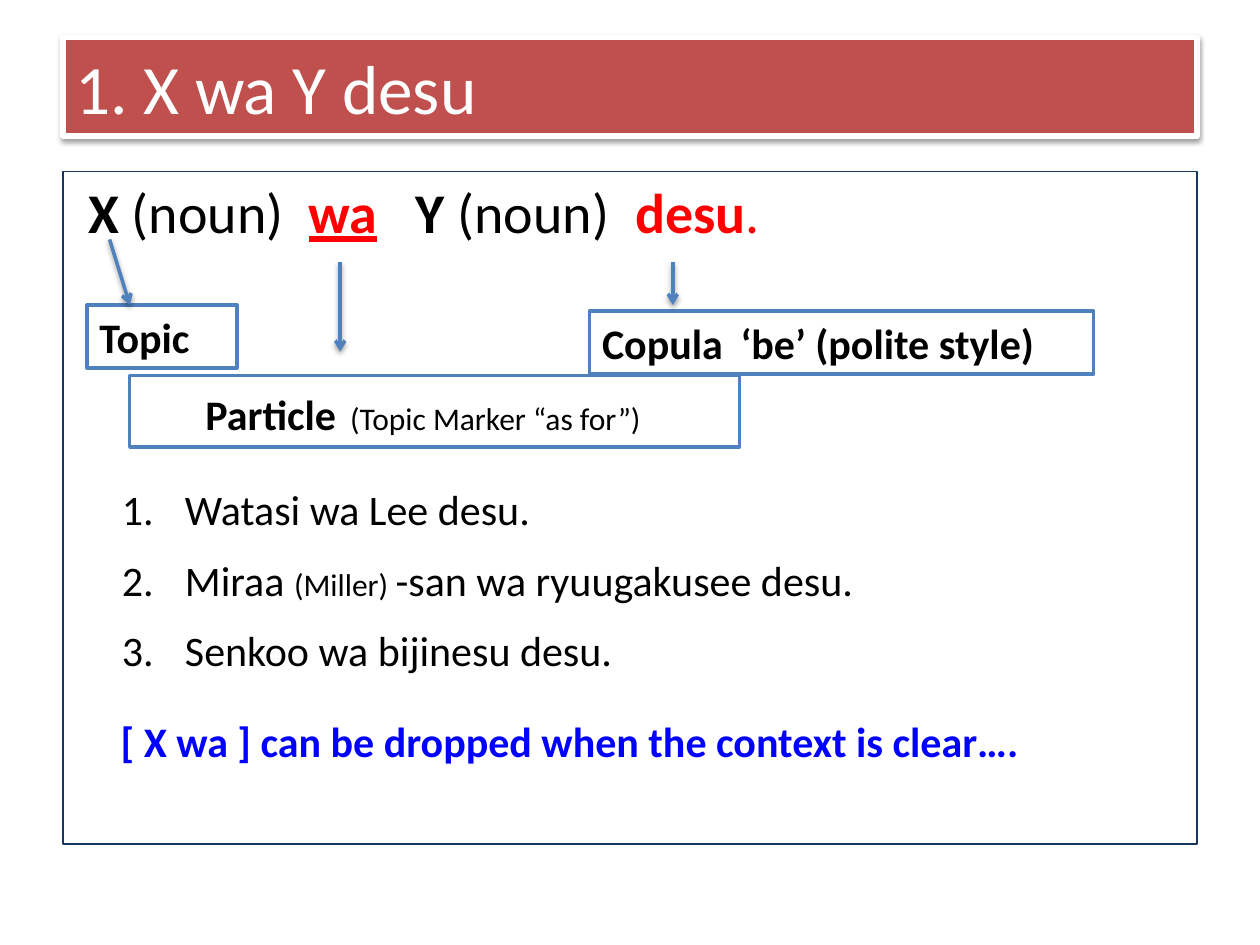
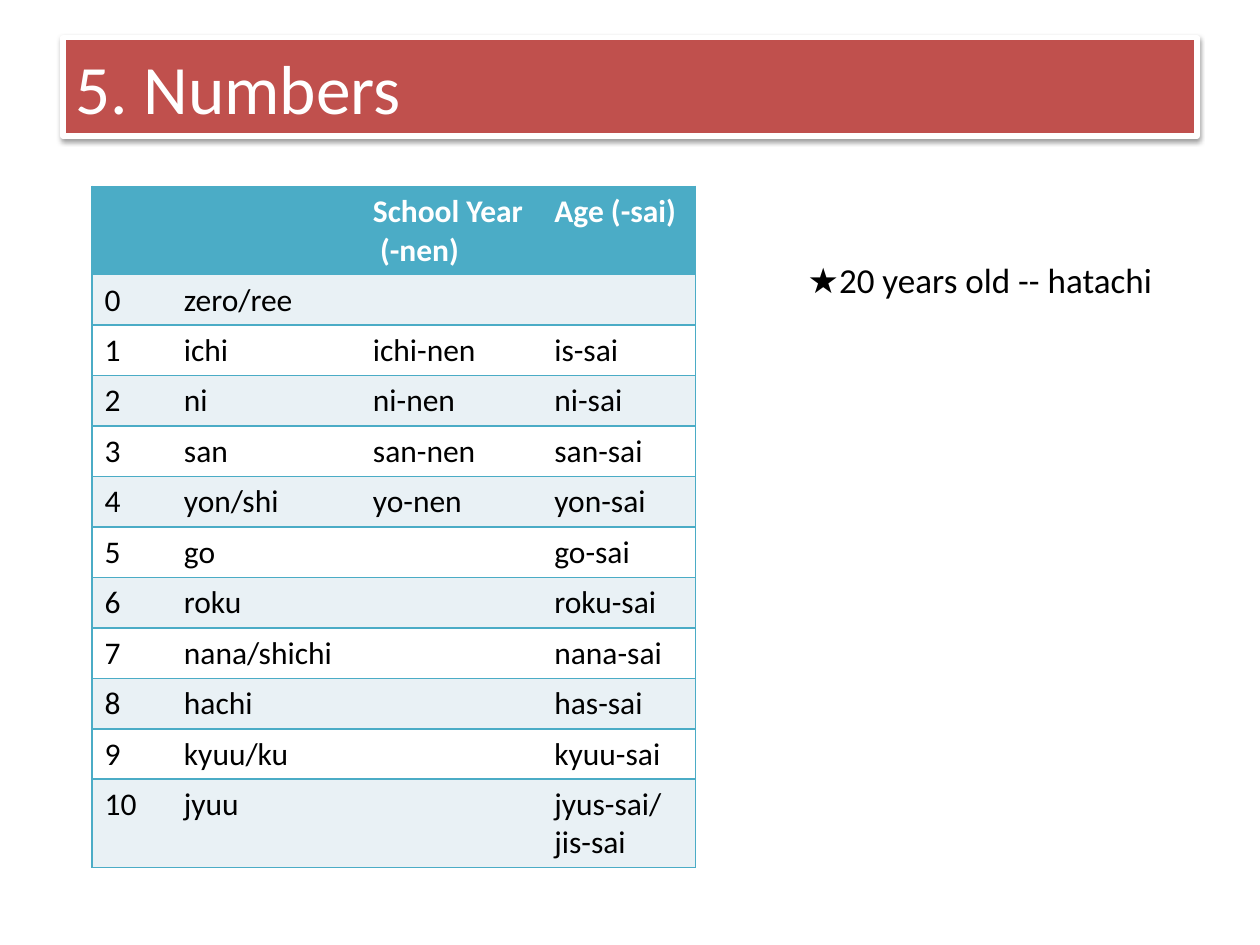
from dataclasses import dataclass
from typing import NamedTuple, Optional

from lxml.etree import SubElement
from pptx import Presentation
from pptx.dml.color import RGBColor
from pptx.enum.shapes import MSO_CONNECTOR, MSO_SHAPE
from pptx.enum.text import MSO_ANCHOR, PP_ALIGN
from pptx.oxml.ns import qn
from pptx.util import Inches, Pt

FONT = "Calibri"
WHITE = RGBColor(0xFF, 0xFF, 0xFF)
BLACK = RGBColor(0x00, 0x00, 0x00)
RED = RGBColor(0xFF, 0x00, 0x00)
BLUE = RGBColor(0x00, 0x00, 0xFF)
BRICK = RGBColor(0xC0, 0x50, 0x4D)
NAVY = RGBColor(0x17, 0x37, 0x5E)
STEEL = RGBColor(0x4F, 0x81, 0xBD)
TEAL = RGBColor(0x4B, 0xAC, 0xC6)
PALE = RGBColor(0xE9, 0xF1, 0xF5)


class Span(NamedTuple):
    text: str
    bold: Optional[bool] = None
    color: Optional[RGBColor] = None
    size: Optional[float] = None
    underline: Optional[bool] = None


class Arrow(NamedTuple):
    x1: float
    y1: float
    x2: float
    y2: float


@dataclass
class Box:
    """A rectangle with text; lengths are inches, sizes and line widths points."""
    left: float
    top: float
    width: float
    height: float
    paragraphs: list[list[Span]]
    size: float = 24
    color: RGBColor = BLACK
    bold: bool = False
    fill: Optional[RGBColor] = None
    line: Optional[RGBColor] = None
    line_width: float = 2
    inset_left: float = 0.1
    inset_top: float = 0.05
    anchor: MSO_ANCHOR = MSO_ANCHOR.TOP
    line_spacing: float = 1.0
    space_after: float = 0
    tabs: tuple[float, ...] = ()
    numbered: bool = False
    shadow: bool = False


TOPIC_PATTERN = [
    Span("X", bold=True), Span(" (noun)\t"),
    Span("wa", bold=True, color=RED, underline=True),
    Span("\t"), Span("Y", bold=True), Span(" (noun)\t"),
    Span("desu", bold=True, color=RED), Span(".", color=RED),
]
EXAMPLES = [
    [Span("Watasi wa Lee desu.")],
    [Span("Miraa "), Span("(Miller) ", size=18), Span("-san wa ryuugakusee desu.")],
    [Span("Senkoo wa bijinesu desu.")],
]
PATTERN_BOXES = [
    Box(0.5, 1.36, 9, 5.34, [TOPIC_PATTERN], size=32, line=NAVY, line_width=0.75,
        inset_left=0.2, tabs=(1.75, 2.6, 4.34)),
    Box(1.03, 2.98, 4.84, 0.57,
        [[Span("Particle\t", bold=True), Span("(Topic Marker “as for”)", size=18)]],
        fill=WHITE, line=STEEL, inset_left=0.6, inset_top=0.1, tabs=(1.15,)),
    Box(4.68, 2.47, 4, 0.5, [[Span("Copula\t‘be’ (polite style)")]], bold=True,
        fill=WHITE, line=STEEL, tabs=(1.1,)),
    Box(0.69, 2.42, 1.19, 0.5, [[Span("Topic")]], bold=True, fill=WHITE, line=STEEL),
    Box(0.87, 3.9, 7.46, 1.53, EXAMPLES, line_spacing=0.7, space_after=20,
        numbered=True),
    Box(0.86, 5.63, 8.21, 0.5,
        [[Span("[ X wa ] can be dropped when the context is clear….")]],
        color=BLUE, bold=True),
]
PATTERN_ARROWS = [
    Arrow(2.7, 2.08, 2.7, 2.79),
    Arrow(5.34, 2.08, 5.34, 2.42),
    Arrow(0.87, 1.9, 1.03, 2.42),
]
AGE_NOTE = Box(5.81, 1.97, 3.69, 0.47, [[Span("★20 years old -- hatachi")]], size=20,
               inset_left=0.6, line_spacing=1.1)

NUMBER_COLUMNS = (0.63, 1.5, 1.44, 1.22)
NUMBER_ROWS = [
    ("", "", "School Year\n (-nen)", "Age (-sai)"),
    ("0", "zero/ree", "", ""),
    ("1", "ichi", "ichi-nen", "is-sai"),
    ("2", "ni", "ni-nen", "ni-sai"),
    ("3", "san", "san-nen", "san-sai"),
    ("4", "yon/shi", "yo-nen", "yon-sai"),
    ("5", "go", "", "go-sai"),
    ("6", "roku", "", "roku-sai"),
    ("7", "nana/shichi", "", "nana-sai"),
    ("8", "hachi", "", "has-sai"),
    ("9", "kyuu/ku", "", "kyuu-sai"),
    ("10", "jyuu", "", "jyus-sai/\njis-sai"),
]
ROW_HEIGHT = 0.4
EXTRA_LINE = 0.3


def set_effects(shape, shadow: bool) -> None:
    """Give the shape its own effect list, empty unless a shadow is wanted."""
    effects = SubElement(shape.element.spPr, qn("a:effectLst"))
    if shadow:
        outer = SubElement(effects, qn("a:outerShdw"), blurRad=str(Pt(3.1)),
                           dist=str(Pt(1.6)), dir="5400000", rotWithShape="0")
        color = SubElement(outer, qn("a:srgbClr"), val=str(BLACK))
        SubElement(color, qn("a:alpha"), val="38000")


def set_font(font, size: float, color: RGBColor, bold: bool) -> None:
    font.name = FONT
    font.size = Pt(size)
    font.bold = bold
    font.color.rgb = color


def add_span(para, span: Span) -> None:
    run = para.add_run()
    run.text = span.text
    if span.bold is not None:
        run.font.bold = span.bold
    if span.underline is not None:
        run.font.underline = span.underline
    if span.size is not None:
        run.font.size = Pt(span.size)
    if span.color is not None:
        run.font.color.rgb = span.color


def add_paragraph(para, spans: list[Span], box: Box) -> None:
    para.alignment = PP_ALIGN.LEFT
    para.line_spacing = box.line_spacing
    para.space_after = Pt(box.space_after)
    properties = para._p.get_or_add_pPr()
    if box.numbered:
        properties.set("marL", str(Inches(0.5)))
        properties.set("indent", str(Inches(-0.5)))
        SubElement(properties, qn("a:buAutoNum"), type="arabicPeriod")
    if box.tabs:
        stops = SubElement(properties, qn("a:tabLst"))
        for stop in box.tabs:
            SubElement(stops, qn("a:tab"), pos=str(Inches(stop)), algn="l")
    set_font(para.font, box.size, box.color, box.bold)
    for span in spans:
        add_span(para, span)


def add_box(page, box: Box) -> None:
    place = [Inches(n) for n in (box.left, box.top, box.width, box.height)]
    if box.line is None:
        shape = page.shapes.add_textbox(*place)
    else:
        shape = page.shapes.add_shape(MSO_SHAPE.RECTANGLE, *place)
        if box.fill is None:
            shape.fill.background()
        else:
            shape.fill.solid()
            shape.fill.fore_color.rgb = box.fill
        shape.line.color.rgb = box.line
        shape.line.width = Pt(box.line_width)
        set_effects(shape, box.shadow)
    frame = shape.text_frame
    frame.word_wrap = True
    frame.vertical_anchor = box.anchor
    frame.margin_left = Inches(box.inset_left)
    frame.margin_top = Inches(box.inset_top)
    for index, spans in enumerate(box.paragraphs):
        para = frame.add_paragraph() if index else frame.paragraphs[0]
        add_paragraph(para, spans, box)


def add_arrow(page, arrow: Arrow) -> None:
    connector = page.shapes.add_connector(
        MSO_CONNECTOR.STRAIGHT, *(Inches(n) for n in arrow))
    connector.line.color.rgb = STEEL
    connector.line.width = Pt(2)
    SubElement(connector.element.spPr.find(qn("a:ln")), qn("a:tailEnd"), type="arrow")
    set_effects(connector, shadow=True)


def set_border(cell, side: str, visible: bool) -> None:
    line = SubElement(cell._tc.get_or_add_tcPr(), qn(f"a:ln{side}"), w=str(Pt(1)))
    if visible:
        fill = SubElement(line, qn("a:solidFill"))
        SubElement(fill, qn("a:srgbClr"), val=str(TEAL))
    else:
        SubElement(line, qn("a:noFill"))


def add_number_table(page) -> None:
    heights = [ROW_HEIGHT + EXTRA_LINE * any("\n" in text for text in row)
               for row in NUMBER_ROWS]
    table = page.shapes.add_table(
        len(NUMBER_ROWS), len(NUMBER_COLUMNS), Inches(0.73), Inches(1.48),
        Inches(sum(NUMBER_COLUMNS)), Inches(sum(heights))).table
    table.horz_banding = False
    for column, width in zip(table.columns, NUMBER_COLUMNS):
        column.width = Inches(width)
    last = len(NUMBER_COLUMNS) - 1
    for r, texts in enumerate(NUMBER_ROWS):
        table.rows[r].height = Inches(heights[r])
        header = r == 0
        for c, text in enumerate(texts):
            cell = table.cell(r, c)
            for side, visible in (("L", c == 0), ("R", c == last),
                                  ("T", True), ("B", True)):
                set_border(cell, side, visible)
            cell.fill.solid()
            cell.fill.fore_color.rgb = TEAL if header else PALE if r % 2 else WHITE
            cell.text = text
            for para in cell.text_frame.paragraphs:
                set_font(para.font, 18, WHITE if header else BLACK, header)


def add_page(deck, title: str):
    page = deck.slides.add_slide(deck.slide_layouts[6])
    add_box(page, Box(0.5, 0.3, 9, 0.78, [[Span(title)]], size=39.6, color=WHITE,
                      fill=BRICK, line=WHITE, line_width=3,
                      anchor=MSO_ANCHOR.MIDDLE, shadow=True))
    return page


def main() -> None:
    deck = Presentation()
    deck.slide_width, deck.slide_height = Inches(10), Inches(7.5)

    pattern_page = add_page(deck, "1. X wa Y desu")
    for box in PATTERN_BOXES:
        add_box(pattern_page, box)
    for arrow in PATTERN_ARROWS:
        add_arrow(pattern_page, arrow)

    numbers_page = add_page(deck, "5. Numbers")
    add_box(numbers_page, AGE_NOTE)
    add_number_table(numbers_page)

    deck.save("out.pptx")


if __name__ == "__main__":
    main()
